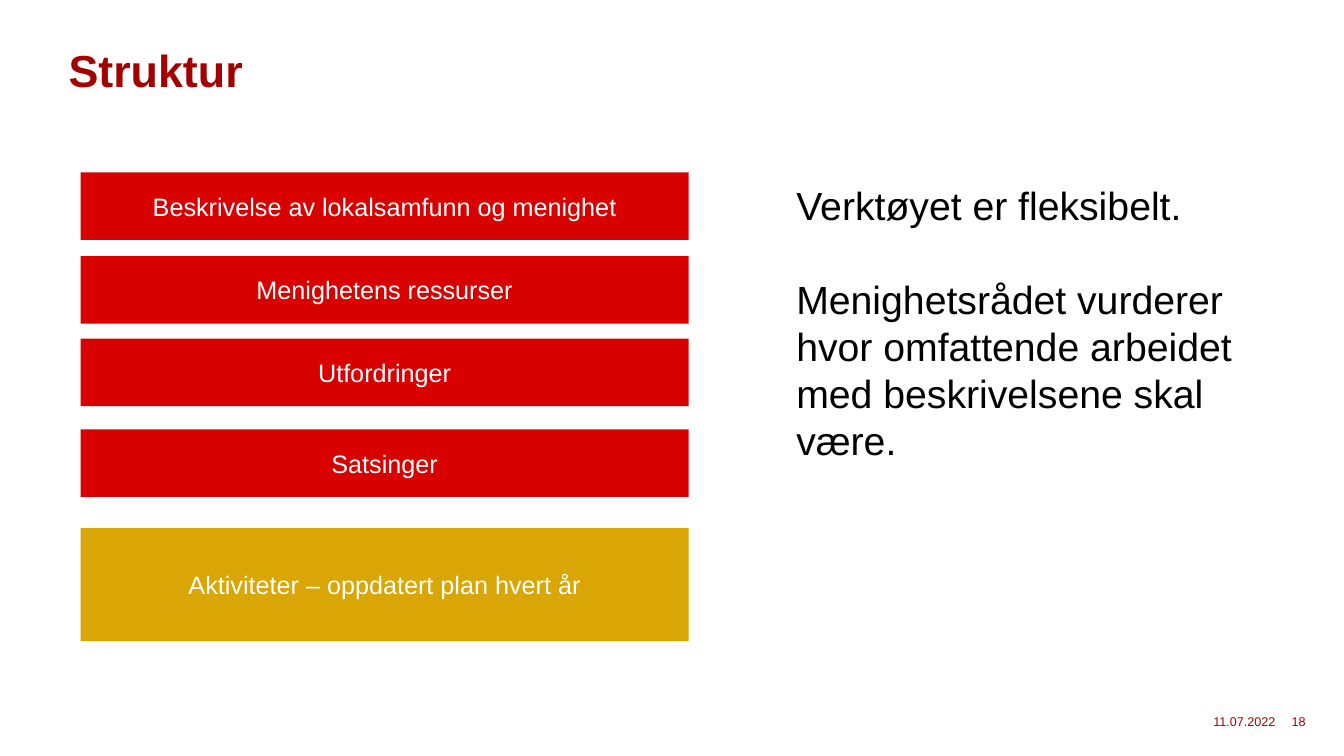
from pptx import Presentation
from pptx.dml.color import RGBColor
from pptx.enum.shapes import MSO_SHAPE
from pptx.enum.text import MSO_ANCHOR, PP_ALIGN
from pptx.util import Inches, Pt

RECTANGLE = MSO_SHAPE.RECTANGLE
TOP, MIDDLE = MSO_ANCHOR.TOP, MSO_ANCHOR.MIDDLE
LEFT, CENTER, RIGHT = PP_ALIGN.LEFT, PP_ALIGN.CENTER, PP_ALIGN.RIGHT

FONT = "Arial"
COLORS = {
    "dark_red": "A30000",
    "red": "D90000",
    "gold": "D9A605",
    "white": "FFFFFF",
    "black": "000000",
}
BAR_LEFT, BAR_WIDTH, BAR_HEIGHT = 0.8, 6.03, 0.67
BODY_LINE = Pt(33.6)

# Label, top, height, colour
BARS = [
    ("Beskrivelse av lokalsamfunn og menighet", 1.71, BAR_HEIGHT, "red"),
    ("Menighetens ressurser", 2.54, BAR_HEIGHT, "red"),
    ("Utfordringer", 3.36, BAR_HEIGHT, "red"),
    ("Satsinger", 4.26, BAR_HEIGHT, "red"),
    ("Aktiviteter – oppdatert plan hvert år", 5.24, 1.12, "gold"),
]
BODY = [
    "Verktøyet er fleksibelt.",
    "Menighetsrådet vurderer hvor omfattende arbeidet med beskrivelsene skal være.",
]


def style_paragraph(paragraph, text, size, color, align=LEFT, bold=False):
    paragraph.text = text
    paragraph.alignment = align
    paragraph.font.name = FONT
    paragraph.font.size = Pt(size)
    paragraph.font.bold = bold
    paragraph.font.color.rgb = RGBColor.from_string(COLORS[color])


def add_text_box(slide, box, anchor):
    frame = slide.shapes.add_textbox(*map(Inches, box)).text_frame
    frame.word_wrap = True
    frame.vertical_anchor = anchor
    return frame


def add_label(slide, text, box, size, align=LEFT, bold=False):
    """Add a single dark red line of text without insets."""
    frame = add_text_box(slide, box, MIDDLE)
    frame.margin_left = frame.margin_right = 0
    frame.margin_top = frame.margin_bottom = 0
    paragraph = frame.paragraphs[0]
    style_paragraph(paragraph, text, size, "dark_red", align, bold)
    return paragraph


def add_bar(slide, text, top, height, color):
    box = (BAR_LEFT, top, BAR_WIDTH, height)
    shape = slide.shapes.add_shape(RECTANGLE, *map(Inches, box))
    shape.shadow.inherit = False
    shape.fill.solid()
    shape.fill.fore_color.rgb = RGBColor.from_string(COLORS[color])
    shape.line.fill.background()
    frame = shape.text_frame
    frame.word_wrap = True
    frame.vertical_anchor = MIDDLE
    style_paragraph(frame.paragraphs[0], text, 18, "white", CENTER)


def add_body(slide, texts, box):
    frame = add_text_box(slide, box, TOP)
    for index, text in enumerate(texts):
        paragraph = frame.add_paragraph() if index else frame.paragraphs[0]
        style_paragraph(paragraph, text, 28, "black")
        paragraph.line_spacing = BODY_LINE
        if index:
            paragraph.space_before = BODY_LINE


def main():
    presentation = Presentation()
    presentation.slide_width = Inches(13.33)
    presentation.slide_height = Inches(7.5)
    slide = presentation.slides.add_slide(presentation.slide_layouts[6])

    # Title
    title = add_label(slide, "Struktur", (0.68, 0.25, 11.97, 0.94), 32, bold=True)
    title.line_spacing = 0.9

    # Date and slide number
    add_label(slide, "11.07.2022", (11.47, 7.04, 1.18, 0.23), 9, RIGHT)
    add_label(slide, "18", (12.81, 7.04, 0.38, 0.23), 9)

    # Structure of the plan
    for bar in BARS:
        add_bar(slide, *bar)

    # Explanation
    add_body(slide, BODY, (7.8, 1.75, 4.73, 2.93))

    presentation.save("out.pptx")


if __name__ == "__main__":
    main()
